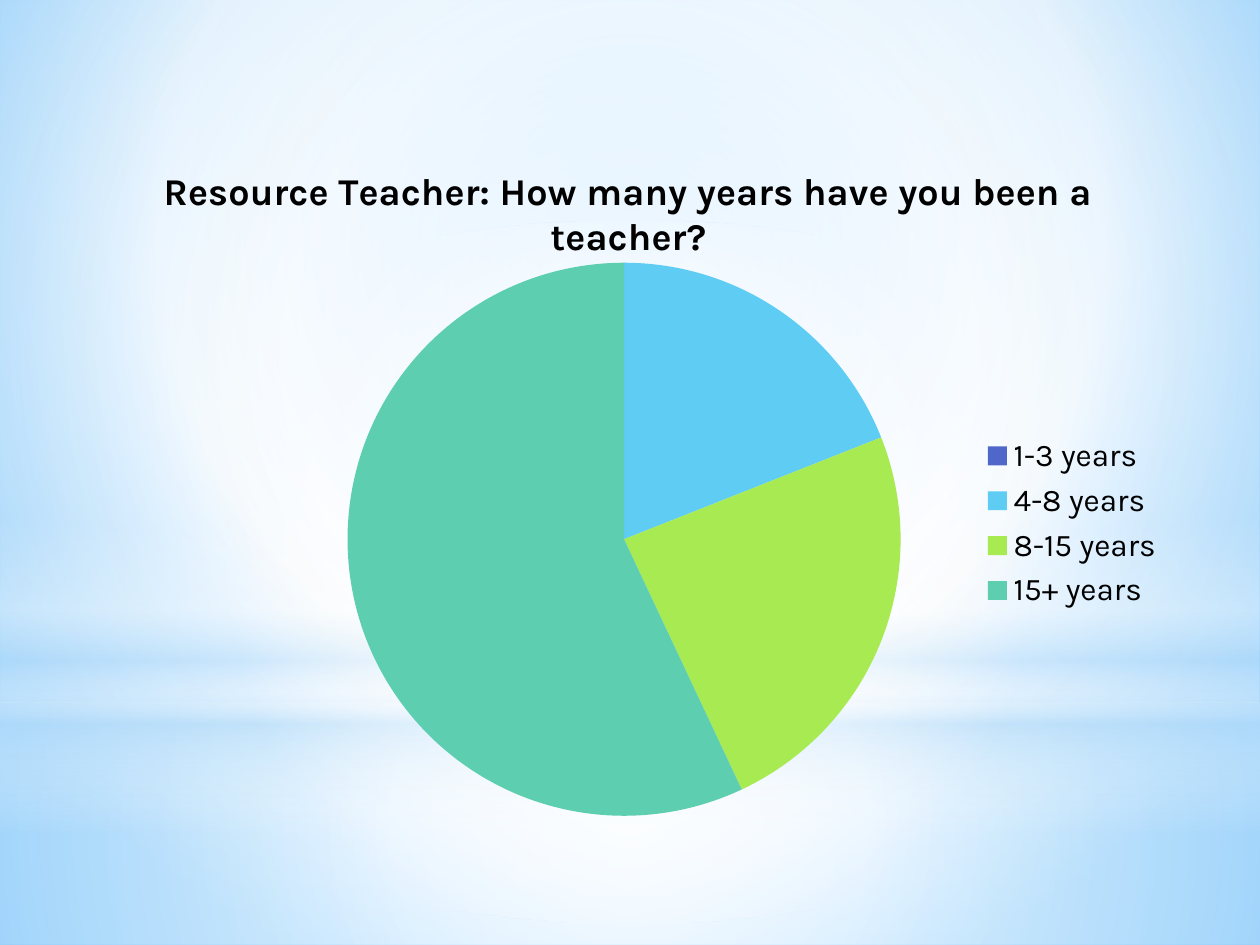
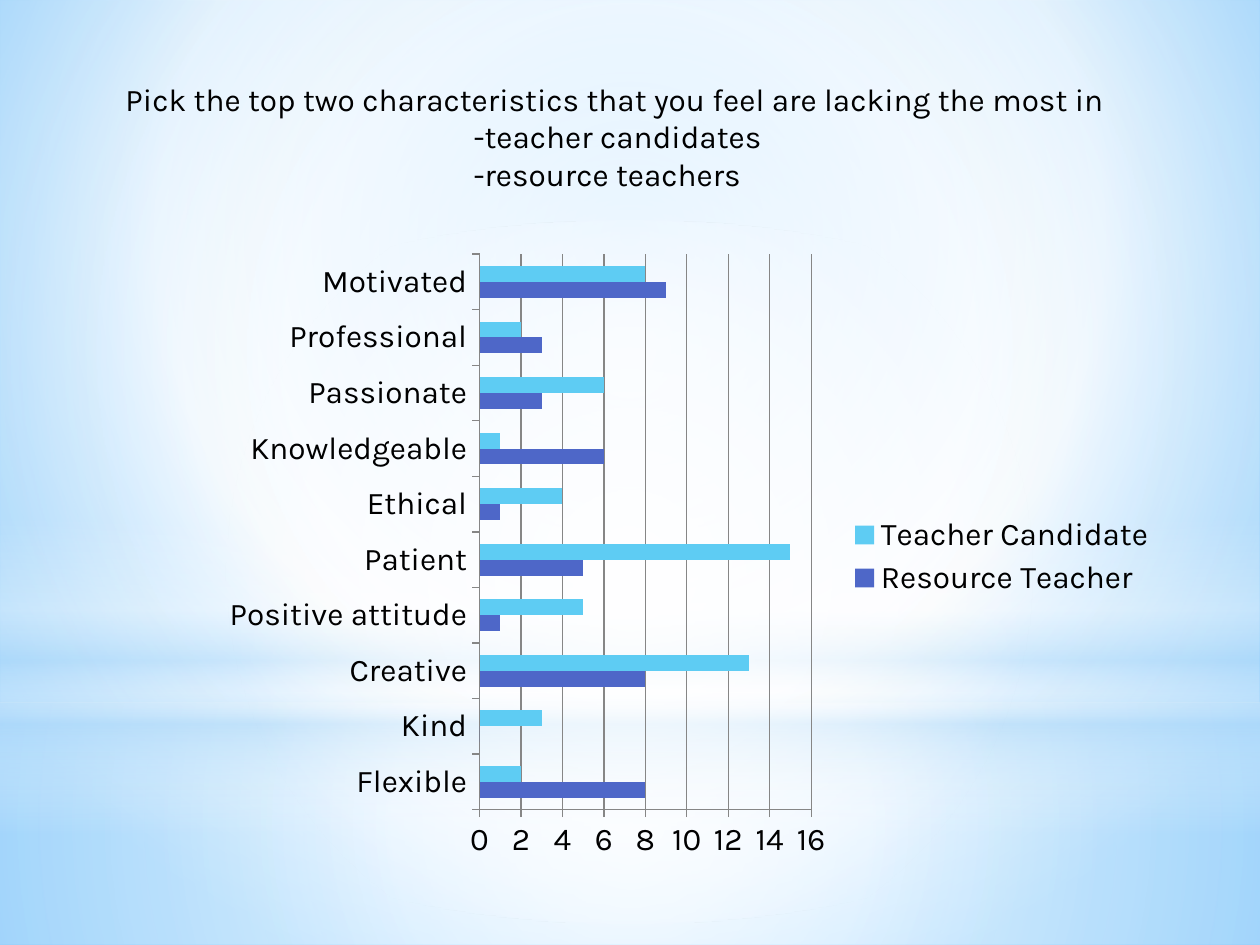
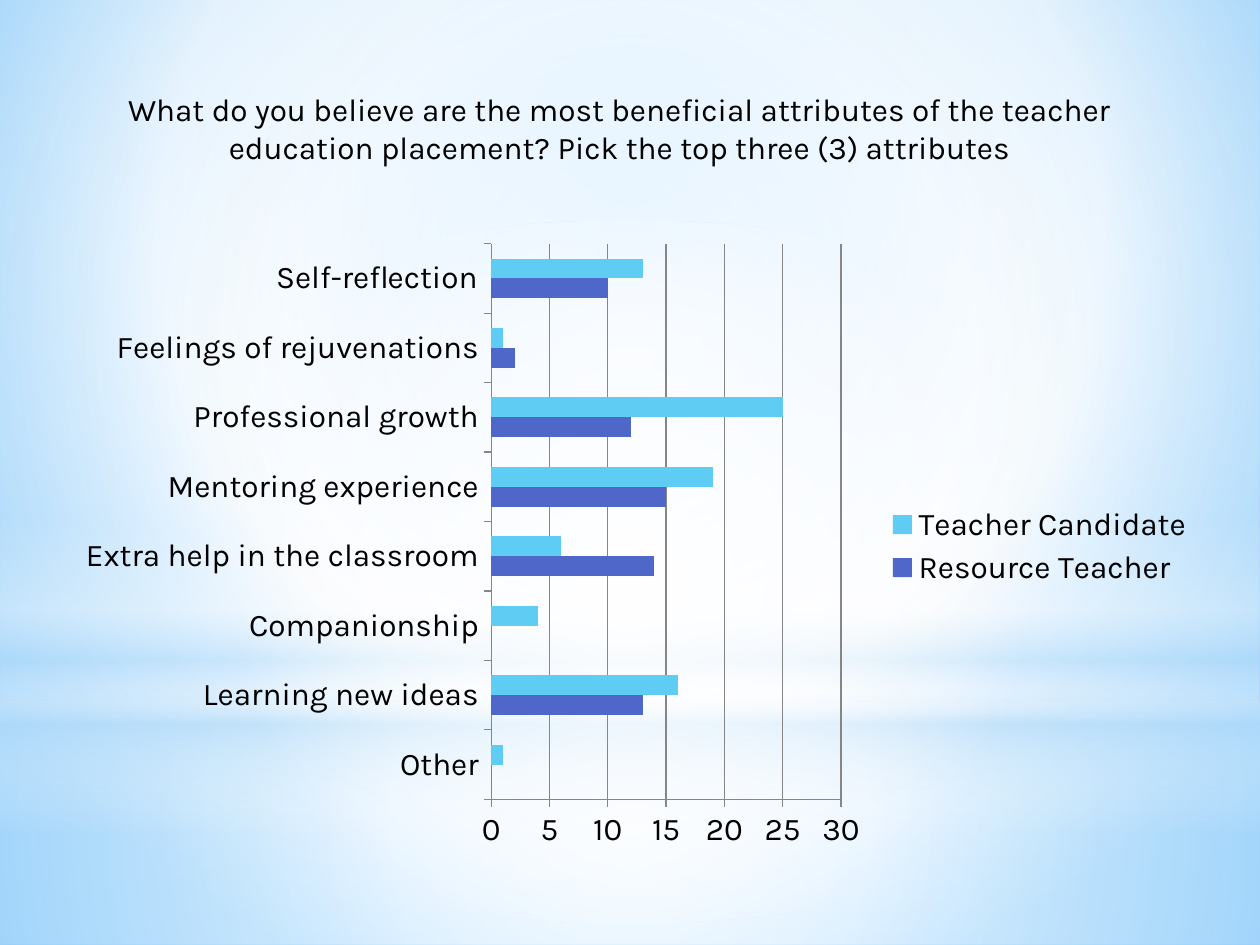
from lxml import etree
from pptx import Presentation
from pptx.chart.data import CategoryChartData
from pptx.dml.color import RGBColor
from pptx.enum.chart import XL_CHART_TYPE, XL_LEGEND_POSITION, XL_TICK_MARK
from pptx.enum.shapes import MSO_SHAPE
from pptx.enum.text import PP_ALIGN
from pptx.oxml import parse_xml
from pptx.oxml.ns import nsdecls, qn
from pptx.util import Cm, Pt

FONT = "Karla"
BLACK, WHITE, SKY, GRID = "000000", "FFFFFF", "B4DCFA", "868686"
INDIGO, CYAN, LIME, TEAL = "4E67C8", "5ECCF3", "A7EA52", "5DCEAF"
CENTER = (50, 50, 50, 50)


def rgb(value):
    return RGBColor.from_string(value)


def set_gradient(fill, element, stops, focus):
    fill.gradient()
    grad = next(element.iter(qn("a:gradFill")))
    grad.clear()
    grad.set("rotWithShape", "1")
    gs_lst = etree.SubElement(grad, qn("a:gsLst"))
    for pos, color, alpha in stops:
        gs = etree.SubElement(gs_lst, qn("a:gs"), pos=str(pos * 1000))
        clr = etree.SubElement(gs, qn("a:srgbClr"), val=color)
        if alpha < 100:
            etree.SubElement(clr, qn("a:alpha"), val=str(alpha * 1000))
    if focus:
        circle = etree.SubElement(grad, qn("a:path"), path="circle")
        rect = etree.SubElement(circle, qn("a:fillToRect"))
        for side, value in zip("ltrb", focus):
            rect.set(side, str(value * 1000))
    else:
        etree.SubElement(grad, qn("a:lin"), ang="5400000", scaled="0")


prs = Presentation()
prs.slide_width, prs.slide_height = Cm(25.4), Cm(19.05)
pie_slide, lacking_slide, benefit_slide = [
    prs.slides.add_slide(prs.slide_layouts[6]) for _ in range(3)
]

master = prs.slide_master
set_gradient(master.background.fill, master.element,
             [(0, "9ED5FF", 100), (60, WHITE, 100), (100, "5BB9FF", 100)],
             (20, 10, 20, 60))

glows = [
    (MSO_SHAPE.RECTANGLE, 14.17, 4.88,
     [(0, WHITE, 91), (37, WHITE, 76), (100, SKY, 79)], CENTER),
    (MSO_SHAPE.RECTANGLE, 0, 14.17,
     [(0, WHITE, 89), (48, WHITE, 62), (100, SKY, 79)], CENTER),
    (MSO_SHAPE.RECTANGLE, 10.46, 6.35,
     [(0, WHITE, 0), (29, WHITE, 30), (45, SKY, 40),
      (55, WHITE, 26), (65, SKY, 60), (100, WHITE, 0)], None),
    (MSO_SHAPE.OVAL, 4.45, 14.17,
     [(0, WHITE, 100), (56, WHITE, 0)], CENTER),
]
for i, (kind, top, height, stops, focus) in enumerate(glows):
    sp = pie_slide.shapes.add_shape(kind, 0, Cm(top), prs.slide_width, Cm(height))
    sp.shadow.inherit = False
    sp.line.fill.background()
    set_gradient(sp.fill, sp.element, stops, focus)
    next(sp.element.iter(qn("p:cNvPr"))).set("id", str(100 + i))
    master.shapes.element.insert(2 + i, sp.element)

charts = [
    (pie_slide, XL_CHART_TYPE.PIE, (-0.03, 2.79, 25.4, 13.77),
     ["1-3 years", "4-8 years", "8-15 years", "15+ years"],
     [("Series 1", [0, 19, 24, 57])]),
    (lacking_slide, XL_CHART_TYPE.BAR_CLUSTERED, (4.24, 4.87, 19.48, 12.7),
     ["Flexible", "Kind", "Creative", "Positive attitude", "Patient",
      "Ethical", "Knowledgeable", "Passionate", "Professional", "Motivated"],
     [("Resource Teacher", [8, 0, 8, 1, 5, 1, 6, 3, 3, 9]),
      ("Teacher Candidate ", [2, 3, 13, 5, 15, 4, 1, 6, 2, 8])]),
    (benefit_slide, XL_CHART_TYPE.BAR_CLUSTERED, (1.27, 4.66, 23.06, 12.7),
     ["Other", "Learning new ideas", "Companionship",
      "Extra help in the classroom", "Mentoring experience",
      "Professional growth", "Feelings of rejuvenations", "Self-reflection"],
     [("Resource Teacher", [0, 13, 0, 14, 15, 12, 2, 10]),
      ("Teacher Candidate", [1, 16, 4, 6, 19, 25, 1, 13])]),
]
for s, kind, box, cats, series in charts:
    data = CategoryChartData()
    data.categories = cats
    for name, values in series:
        data.add_series(name, values)
    chart = s.shapes.add_chart(kind, *map(Cm, box), data).chart
    chart.font.name, chart.font.size = FONT, Pt(18)
    chart.font.color.rgb = rgb(BLACK)
    chart.has_legend = True
    chart.legend.position = XL_LEGEND_POSITION.RIGHT
    chart.legend.include_in_layout = False
    plot = chart.plots[0]
    if kind == XL_CHART_TYPE.PIE:
        plot.vary_by_categories = True
        for i, color in enumerate([INDIGO, CYAN, LIME, TEAL]):
            fill = plot.series[0].points[i].format.fill
            fill.solid()
            fill.fore_color.rgb = rgb(color)
        tf = chart.chart_title.text_frame
        tf.text = "Resource Teacher: How many years have you been a teacher?"
        font = tf.paragraphs[0].font
        font.name, font.size, font.bold = FONT, Pt(21.6), True
        font.color.rgb = rgb(BLACK)
        chart.chart_title.include_in_layout = False
        for tag, index, target, (x, y, w, h) in [
            ("c:plotArea", 0, '<c:layoutTarget val="inner"/>', (0.277, 0.182, 0.439, 0.81)),
            ("c:legend", 1, "", (0.777, 0.426, 0.15, 0.275)),
        ]:
            area = next(chart.element.iter(qn(tag)))
            for old in area.findall(qn("c:layout")):
                area.remove(old)
            area.insert(index, parse_xml(
                f'<c:layout {nsdecls("c")}><c:manualLayout>{target}'
                '<c:xMode val="edge"/><c:yMode val="edge"/>'
                f'<c:x val="{x}"/><c:y val="{y}"/><c:w val="{w}"/><c:h val="{h}"/>'
                '</c:manualLayout></c:layout>'))
    else:
        chart.has_title = False
        plot.vary_by_categories = False
        plot.gap_width = 150
        for ser, color in zip(plot.series, [INDIGO, CYAN]):
            ser.format.fill.solid()
            ser.format.fill.fore_color.rgb = rgb(color)
        chart.value_axis.has_major_gridlines = True
        for axis in (chart.category_axis, chart.value_axis):
            axis.major_tick_mark = XL_TICK_MARK.OUTSIDE
            axis.format.line.color.rgb = rgb(GRID)
            axis.format.line.width = Pt(0.75)
        grid = chart.value_axis.major_gridlines.format.line
        grid.color.rgb = rgb(GRID)
        grid.width = Pt(0.75)

questions = [
    (lacking_slide, (1.68, 1.48, 22.66, 2.57), PP_ALIGN.LEFT,
     [("Pick the top two characteristics that you feel are lacking the most in", 0.6),
      ("-teacher candidates", 7.62),
      ("-resource teachers", 7.62)]),
    (benefit_slide, (1.91, 1.7, 21.16, 1.8), PP_ALIGN.CENTER,
     [("What do you believe are the most beneficial attributes of the teacher "
       "education placement? Pick the top three (3) attributes", 0)]),
]
for s, box, align, lines in questions:
    sp = s.shapes.add_textbox(*map(Cm, box))
    tf = sp.text_frame
    tf.word_wrap = True
    tf.text = "\n".join(text for text, _ in lines)
    for p, el, (_, indent) in zip(tf.paragraphs, sp.element.iter(qn("a:p")), lines):
        p.alignment = align
        p.font.name, p.font.size = FONT, Pt(18)
        p.font.color.rgb = rgb(BLACK)
        el.get_or_add_pPr().set("marL", str(Cm(indent)))

prs.save("out.pptx")
